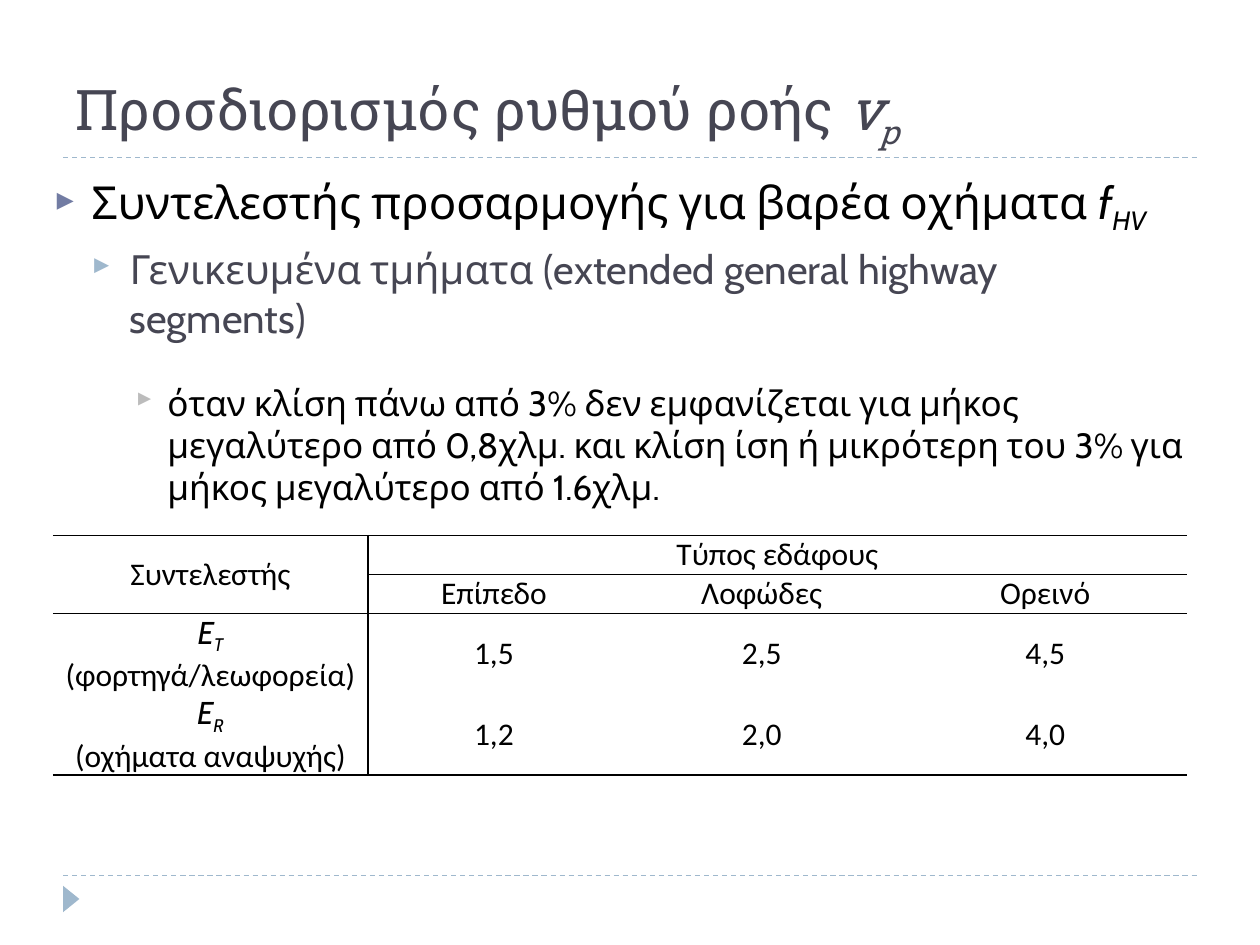
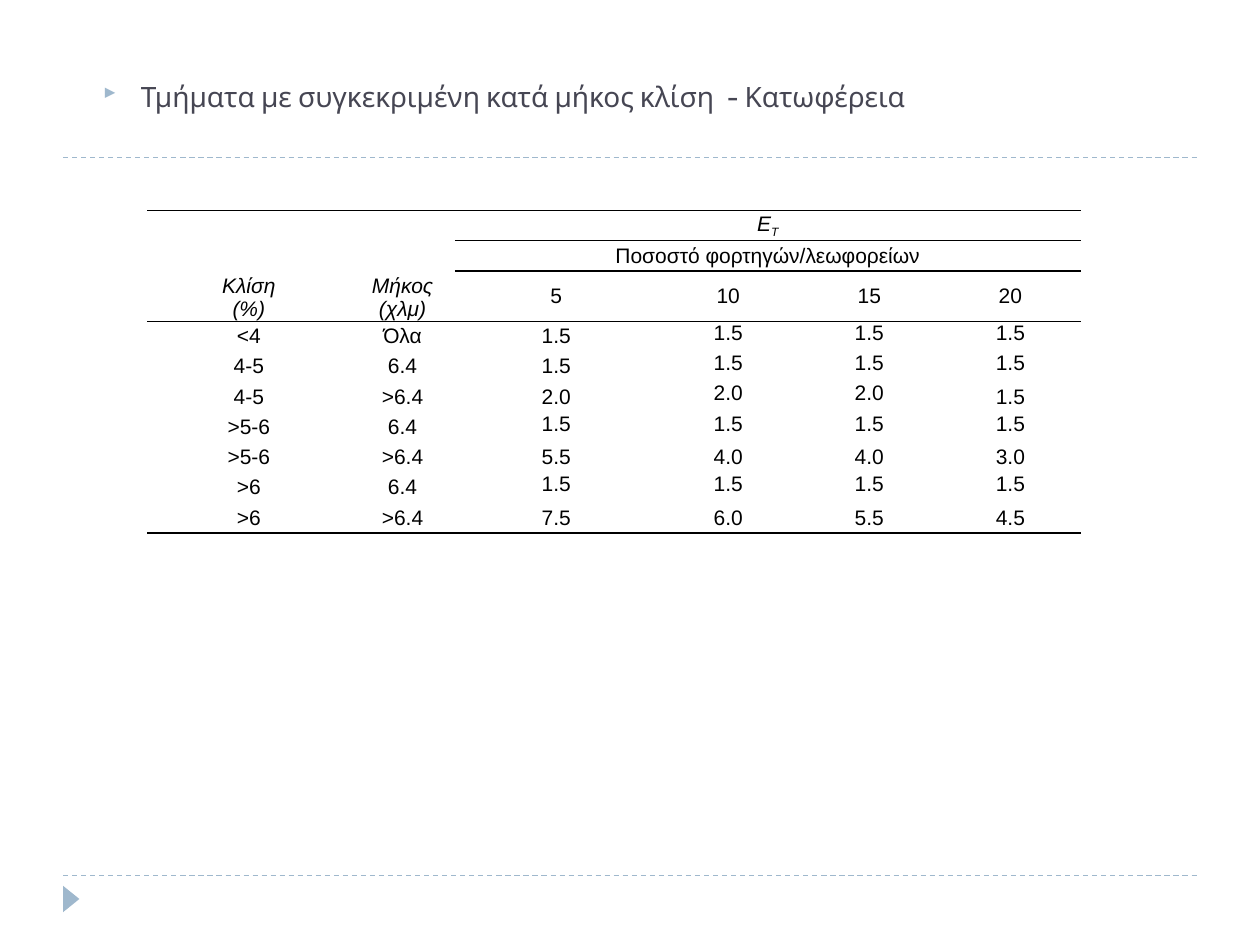
from collections import namedtuple
from lxml.etree import SubElement
from pptx import Presentation
from pptx.dml.color import RGBColor
from pptx.enum.dml import MSO_LINE
from pptx.enum.shapes import MSO_CONNECTOR as Connector, MSO_SHAPE as Shape
from pptx.enum.text import MSO_ANCHOR as Anchor, PP_ALIGN as Align
from pptx.oxml.ns import qn
from pptx.util import Inches, Pt

Look = namedtuple("Look", "font size color")
Level = namedtuple("Level", "margin indent before after bullet")


class Theme:
    accent = "9FB8CD"
    ink = "000000"
    slate = "464653"
    title = Look("Roboto Slab", 32, slate)
    topic = Look("Cabin", 26, ink)
    subtopic = Look("Cabin", 23, slate)
    detail = Look("Cabin", 20, ink)
    heading = Look("Cabin", 16, slate)
    terrain = Look("Calibri", 18, ink)
    symbol = Look("Cabin", 18, ink)
    grade = Look("Arial", 12, ink)
    levels = [
        Level(0.3, -0.3, 6, 0, "727CA3"),
        Level(0.6, -0.3, 5, 18, accent),
        Level(0.9, -0.25, 5, 0, "BCBCBC"),
    ]
    plain_table = "{2D5ABB26-0587-4C30-8999-92F81FD0307C}"


def write(para, look, spans):
    for text, flags, *other in spans:
        font_name, size, color = other[0] if other else look
        span = para.add_run()
        span.text = text
        span.font.name = font_name
        span.font.size = Pt(size)
        span.font.color.rgb = RGBColor.from_string(color)
        span.font.italic = "i" in flags
        if "s" in flags:
            span.font._element.set("baseline", "-25000")
        if "b" in flags:
            para.add_line_break()


def draw_table(page, left, top, widths, heights, inset, look, grid, merges, across, down, raised):
    frame = page.shapes.add_table(
        len(heights), len(widths), Inches(left), Inches(top),
        Inches(sum(widths)), Inches(sum(heights)))
    table = frame.table
    table.first_row = table.horz_banding = False
    table._tbl.tblPr.find(qn("a:tableStyleId")).text = Theme.plain_table
    for column, width in zip(table.columns, widths):
        column.width = Inches(width)
    for line, height in zip(table.rows, heights):
        line.height = Inches(height)
    for row, col, last_row, last_col in merges:
        table.cell(row, col).merge(table.cell(last_row, last_col))

    for row, values in enumerate(grid):
        for col, value in enumerate(values):
            cell = table.cell(row, col)
            cell.margin_left = cell.margin_right = Inches(inset)
            cell.margin_top = cell.margin_bottom = 0
            cell.vertical_anchor = Anchor.MIDDLE
            if col in raised.get(row, ()):
                cell.vertical_anchor = Anchor.TOP
            edges = {
                "lnL": col in down,
                "lnR": col + 1 in down,
                "lnT": col >= across.get(row, len(widths)),
                "lnB": col >= across.get(row + 1, len(widths)),
            }
            for edge, drawn in edges.items():
                border = SubElement(cell._tc.get_or_add_tcPr(), qn(f"a:{edge}"), w=str(Pt(1)))
                if drawn:
                    SubElement(SubElement(border, qn("a:solidFill")), qn("a:srgbClr"), val=Theme.ink)
                else:
                    SubElement(border, qn("a:noFill"))
            cell.fill.background()
            paragraphs = [[(value, "")]] if isinstance(value, str) else value
            for number, spans in enumerate(paragraphs or []):
                text = cell.text_frame
                para = text.add_paragraph() if number else text.paragraphs[0]
                para.alignment = Align.CENTER
                write(para, look, spans)
    return table


deck = Presentation()
deck.slide_width, deck.slide_height = Inches(10), Inches(7.5)
pages = [deck.slides.add_slide(deck.slide_layouts[6]) for number in range(2)]
flow_page, grade_page = pages

for page in pages:
    for height in (6.95, 1.25):
        rule = page.shapes.add_connector(
            Connector.STRAIGHT, Inches(0.5), Inches(height), Inches(9.5), Inches(height))
        rule.line.color.rgb = RGBColor.from_string(Theme.accent)
        rule.line.width = Pt(0.75)
        rule.line.dash_style = MSO_LINE.DASH
        SubElement(rule._element.spPr, qn("a:effectLst"))
    marker = page.shapes.add_shape(
        Shape.ISOSCELES_TRIANGLE, Inches(0.46), Inches(7.07), Inches(0.21), Inches(0.13))
    marker.rotation = 90
    marker.shadow.inherit = False
    marker.fill.solid()
    marker.fill.fore_color.rgb = RGBColor.from_string(Theme.accent)
    marker.line.fill.background()

title = flow_page.shapes.add_textbox(Inches(0.5), Inches(0.17), Inches(9), Inches(1.08))
title.text_frame.word_wrap = True
title.text_frame.vertical_anchor = Anchor.BOTTOM
write(title.text_frame.paragraphs[0], Theme.title,
      [("Προσδιορισμός ρυθμού ροής ", ""), ("ν", "i"), ("p", "is")])

outlines = [
    (flow_page, (0.33, 1.33, 9.17, 5.4), [
        (0, Theme.topic, [("Συντελεστής προσαρμογής για βαρέα οχήματα ", ""),
                          ("f", "i"), ("HV", "is")]),
        (1, Theme.subtopic, [("Γενικευμένα τμήματα (extended general highway ", "b"),
                             ("segments)", "")]),
        (2, Theme.detail, [("όταν κλίση πάνω από 3% δεν εμφανίζεται για μήκος μεγαλύτερο από "
                            "0,8χλμ. και κλίση ίση ή μικρότερη του 3% για μήκος μεγαλύτερο "
                            "από 1.6χλμ.", "")]),
    ]),
    (grade_page, (0.42, 0.58, 9, 0.5), [
        (1, Theme.heading, [("Τμήματα με συγκεκριμένη κατά μήκος κλίση  - Κατωφέρεια", "")]),
    ]),
]
for page, place, points in outlines:
    box = page.shapes.add_textbox(*map(Inches, place))
    box.text_frame.word_wrap = True
    for number, (depth, look, spans) in enumerate(points):
        para = box.text_frame.add_paragraph() if number else box.text_frame.paragraphs[0]
        level = Theme.levels[depth]
        para.level = depth
        para.space_before, para.space_after = Pt(level.before), Pt(level.after)
        props = para._p.get_or_add_pPr()
        props.set("marL", str(Inches(level.margin)))
        props.set("indent", str(Inches(level.indent)))
        SubElement(SubElement(props, qn("a:buClr")), qn("a:srgbClr"), val=level.bullet)
        SubElement(props, qn("a:buSzPct"), val="76000")
        SubElement(props, qn("a:buFont"), typeface="Wingdings 3", charset="2")
        SubElement(props, qn("a:buChar"), char="}")
        write(para, look, spans)

truck_factor = [("E", "i", Theme.symbol), ("T", "is", Theme.symbol), (" (φορτηγά/λεωφορεία)", "")]
leisure_factor = [("E", "i", Theme.symbol), ("R", "is", Theme.symbol)]
terrain_grid = [
    ["Συντελεστής", "Τύπος εδάφους", None, None],
    [None, "Επίπεδο", "Λοφώδες", "Ορεινό"],
    [[truck_factor], "1,5", "2,5", "4,5"],
    [[leisure_factor, [("(οχήματα αναψυχής)", "")]], "1,2", "2,0", "4,0"],
]
draw_table(
    flow_page, 0.42, 4.25, [2.5, 2, 2.25, 2.25], [0.31, 0.31, 0.64, 0.64], 0.08,
    Theme.terrain, terrain_grid, merges=[(0, 0, 1, 0), (0, 1, 0, 3)],
    across={0: 0, 1: 1, 2: 0, 4: 0}, down=[1], raised={})

grade_grid = [
    [[[("Κλίση", "i")], [("(%)", "i")]], [[("Μήκος", "i")], [("(χλμ)", "i")]],
     [[("Ε", "i"), ("Τ", "is")]], None, None, None],
    [None, None, "Ποσοστό φορτηγών/λεωφορείων", None, None, None],
    [None, None, "5", "10", "15", "20"],
    ["<4", "Όλα", "1.5", "1.5", "1.5", "1.5"],
    ["4-5", "6.4", "1.5", "1.5", "1.5", "1.5"],
    ["4-5", ">6.4", "2.0", "2.0", "2.0", "1.5"],
    [">5-6", "6.4", "1.5", "1.5", "1.5", "1.5"],
    [">5-6", ">6.4", "5.5", "4.0", "4.0", "3.0"],
    [">6", "6.4", "1.5", "1.5", "1.5", "1.5"],
    [">6", ">6.4", "7.5", "6.0", "5.5", "4.5"],
]
grade_table = draw_table(
    grade_page, 1.17, 1.67, [1.61, 0.83, 1.61, 1.12, 1.12, 1.12], [0.24] * 10, 0.07,
    Theme.grade, grade_grid,
    merges=[(0, 0, 2, 0), (0, 1, 2, 1), (0, 2, 0, 5), (1, 2, 1, 5)],
    across={0: 0, 1: 2, 2: 2, 3: 0, 10: 0}, down=[],
    raised={3: range(3, 6), 4: range(3, 6), 5: range(3, 5), 6: range(2, 6), 8: range(2, 6)})
for col in range(2):
    grade_table.cell(0, col).vertical_anchor = Anchor.BOTTOM

deck.save("out.pptx")
